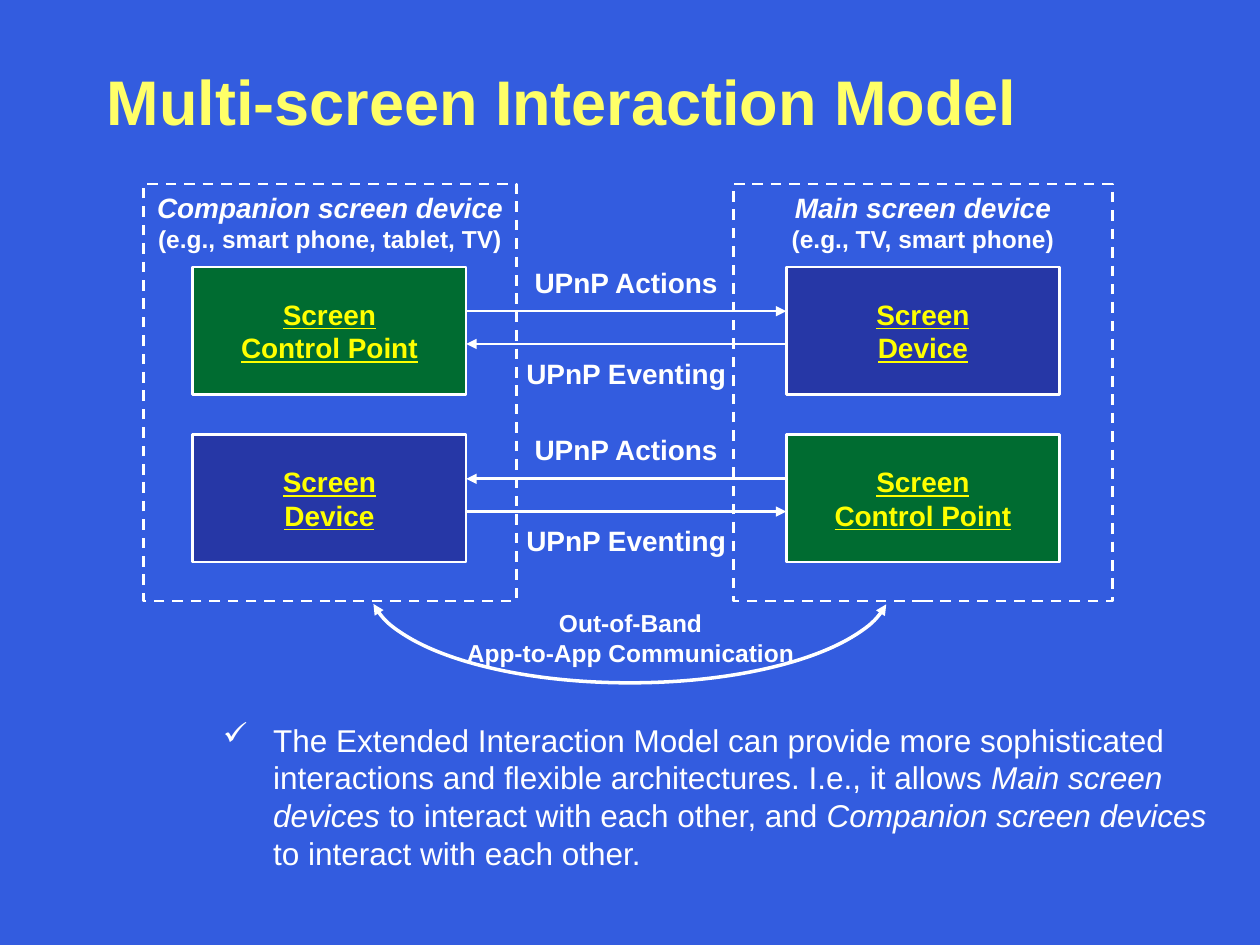
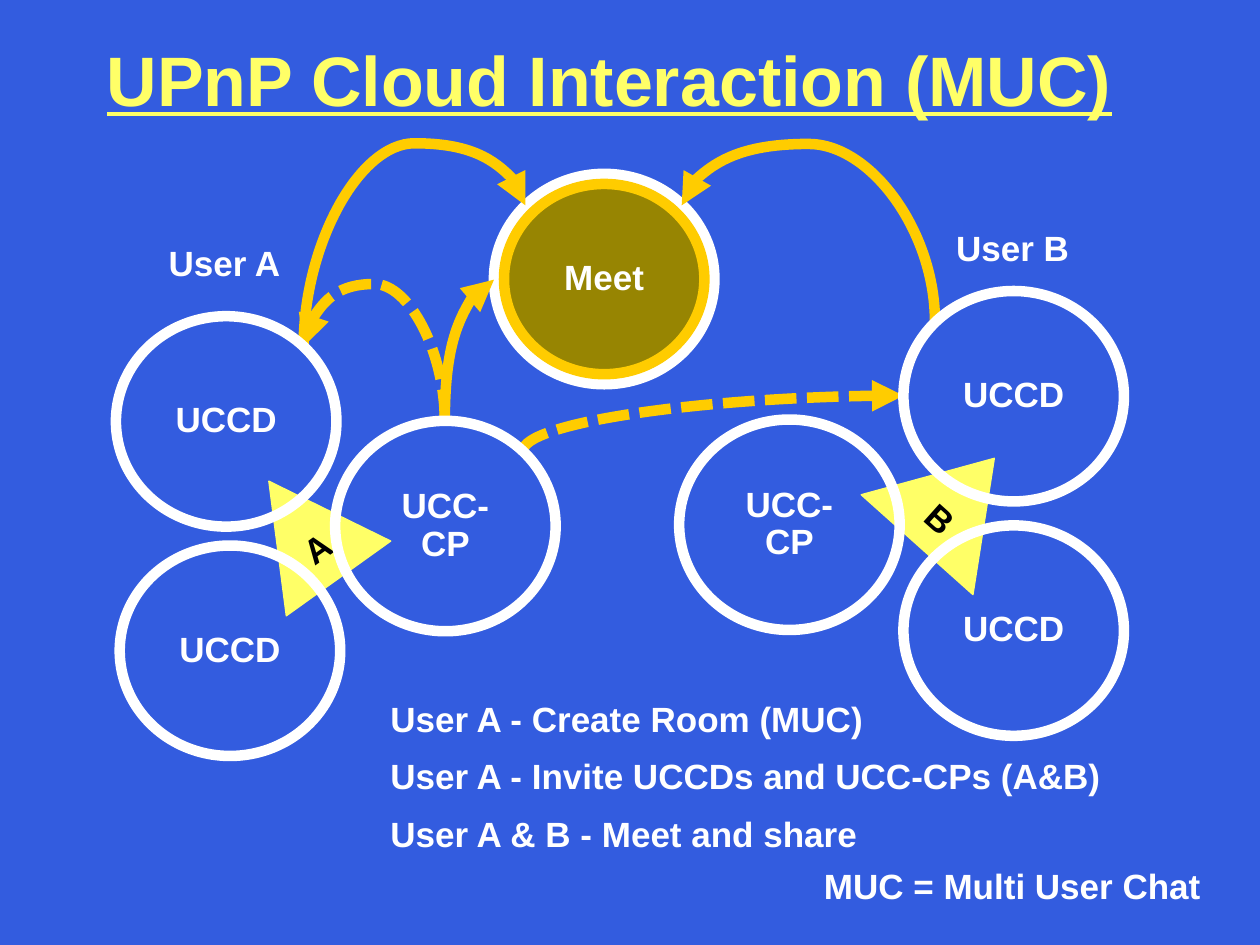
from lxml import etree
from pptx import Presentation
from pptx.dml.color import RGBColor
from pptx.enum import dml, shapes, text
from pptx.oxml.ns import qn
from pptx.util import Inches, Pt

BLUE = RGBColor(0x33, 0x5C, 0xDF)
NAVY = RGBColor(0x26, 0x37, 0xA6)
GREEN = RGBColor(0x00, 0x6C, 0x31)
OLIVE = RGBColor(0x97, 0x85, 0x02)
AMBER = RGBColor(0xFF, 0xCC, 0x00)
LEMON = RGBColor(0xFF, 0xFF, 0x67)
YELLOW = RGBColor(0xFF, 0xFF, 0x00)
WHITE = RGBColor(0xFF, 0xFF, 0xFF)
BLACK = RGBColor(0x00, 0x00, 0x00)

PRESET = shapes.MSO_SHAPE
DASH = dml.MSO_LINE
LEFT, CENTER = text.PP_ALIGN.LEFT, text.PP_ALIGN.CENTER
TOP, MIDDLE = text.MSO_ANCHOR.TOP, text.MSO_ANCHOR.MIDDLE
CIRCLE = (1.75, 1.67)


def write(shape, paragraphs, size=20, color=WHITE, bold=True, underline=False,
          align=CENTER, anchor=MIDDLE, wrap=True, spacing=None, bullet=None):
    """Each paragraph is a string or a list of (text, font overrides) runs."""
    frame = shape.text_frame
    frame.word_wrap, frame.vertical_anchor = wrap, anchor
    for number, content in enumerate(paragraphs):
        paragraph = frame.add_paragraph() if number else frame.paragraphs[0]
        paragraph.alignment = align
        if spacing:
            paragraph.line_spacing = spacing
        if bullet:
            properties = paragraph._p.get_or_add_pPr()
            properties.set("marL", str(Inches(0.4)))
            properties.set("indent", str(-Inches(0.4)))
            etree.SubElement(properties, qn("a:buChar")).set("char", bullet)
        runs = [(content, {})] if isinstance(content, str) else content
        for words, overrides in runs:
            run = paragraph.add_run()
            run.text = words
            font = run.font
            font.name, font.size, font.bold = "Arial", Pt(size), bold
            font.underline = underline
            font.color.rgb = color
            for name, value in overrides.items():
                setattr(font, name, value)


def add_text(slide, box, paragraphs, **style):
    write(slide.shapes.add_textbox(*map(Inches, box)), paragraphs, **style)


def set_line(line, color, width, dash=None):
    line.color.rgb = color
    line.width = Pt(width)
    if dash:
        line.dash_style = dash


def add_figure(slide, preset, box, fill=None, line=WHITE, width=1.5, dash=None):
    figure = slide.shapes.add_shape(preset, *map(Inches, box))
    figure.shadow.inherit = False
    if fill is None:
        figure.fill.background()
    else:
        figure.fill.solid()
        figure.fill.fore_color.rgb = fill
    set_line(figure.line, line, width, dash)
    return figure


def add_arrowheads(figure, *ends):
    outline = figure.line._get_or_add_ln()
    for end in ends:
        etree.SubElement(outline, qn("a:" + end)).set("type", "triangle")


def add_arrow(slide, start, end, kind=shapes.MSO_CONNECTOR.STRAIGHT,
              color=WHITE, width=1.5, dash=None):
    arrow = slide.shapes.add_connector(kind, *map(Inches, start + end))
    set_line(arrow.line, color, width, dash)
    add_arrowheads(arrow, "tailEnd")
    etree.SubElement(arrow._element.spPr, qn("a:effectLst"))
    return arrow


def add_curve(slide, start, end, bend=None, dash=None):
    """Curve that leaves upwards; bend is how far it rises, as a share of the height."""
    middle_x, middle_y = (start[0] + end[0]) / 2, (start[1] + end[1]) / 2
    rightwards = end[0] > start[0]
    side = 1 if rightwards else -1
    across = side * (start[1] - middle_y)
    down = side * (middle_x - start[0])
    curve = add_arrow(slide, (middle_x + across, middle_y + down),
                      (middle_x - across, middle_y - down),
                      shapes.MSO_CONNECTOR.CURVE, AMBER, 6, dash)
    properties = curve._element.spPr
    properties.find(qn("a:xfrm")).set("rot", str((90 if rightwards else 270) * 60000))
    geometry = properties.find(qn("a:prstGeom"))
    if bend is None:
        geometry.set("prst", "curvedConnector2")
    else:
        guides = geometry.find(qn("a:avLst"))
        if guides is None:
            guides = etree.SubElement(geometry, qn("a:avLst"))
        guide = etree.SubElement(guides, qn("a:gd"))
        guide.set("name", "adj1")
        guide.set("fmla", f"val {round(bend * 100000)}")


def start_slide(deck, title, top, size, underline=False):
    slide = deck.slides.add_slide(deck.slide_layouts[6])
    slide.background.fill.solid()
    slide.background.fill.fore_color.rgb = BLUE
    add_text(slide, (0.75, top, 8.5, 0.83), [title], size=size, color=LEMON,
             underline=underline, align=LEFT, spacing=0.9)
    return slide


def add_screen_device(slide, box, name, examples):
    frame = add_figure(slide, PRESET.RECTANGLE, box, dash=DASH.DASH)
    write(frame, [[(name, {"italic": True, "size": Pt(16)})], examples],
          size=14, anchor=TOP)


def add_exchange(slide, top, control_left, device_left):
    """Control point and device, with actions sent one way and events the other."""
    width, height = 2.17, 1.01
    for left, role, fill in ((control_left, "Control Point", GREEN),
                             (device_left, "Device", NAVY)):
        block = add_figure(slide, PRESET.RECTANGLE, (left, top, width, height), fill)
        write(block, ["Screen", role], size=16, color=YELLOW, underline=True)
    inner_left = min(control_left, device_left) + width
    inner_right = max(control_left, device_left)
    ends = [inner_left, inner_right]
    if control_left > device_left:
        ends.reverse()
    source, target = ends
    add_arrow(slide, (source, top + 0.35), (target, top + 0.35))
    add_arrow(slide, (target, top + 0.61), (source, top + 0.61))
    for offset, label in ((-0.05, "UPnP Actions"), (0.67, "UPnP Eventing")):
        add_text(slide, (inner_left, top + offset, inner_right - inner_left, 0.34),
                 [label], size=16)


def add_out_of_band(slide, left, top):
    arc = add_figure(slide, PRESET.ARC, (left, top, 4.14, 1.53), width=2)
    arc.adjustments[0], arc.adjustments[1] = 2.396, 105.66
    add_arrowheads(arc, "headEnd", "tailEnd")
    add_text(slide, (left + 0.59, top + 0.89, 2.97, 0.53),
             ["Out-of-Band", "App-to-App Communication"], size=14, anchor=TOP)


def build_interaction_model(deck):
    slide = start_slide(deck, "Multi-screen Interaction Model", 0.42, 36)
    italic = {"italic": True}
    add_text(slide, (1.67, 5.67, 8.08, 1), [[
        ("The Extended Interaction Model can provide more sophisticated interactions "
         "and flexible architectures. I.e., it allows ", {}),
        ("Main screen devices ", italic),
        ("to interact with each other, and ", {}),
        ("Companion screen devices ", italic),
        ("to interact with each other.", {}),
    ]], size=18, bold=False, align=LEFT, anchor=TOP, bullet="✓")
    add_screen_device(slide, (1.14, 1.46, 2.96, 3.31), "Companion screen device",
                      "(e.g., smart phone, tablet, TV)")
    add_screen_device(slide, (5.82, 1.46, 3.01, 3.31), "Main screen device",
                      "(e.g., TV, smart phone)")
    companion_left, main_left = 1.53, 6.24
    add_exchange(slide, 2.12, companion_left, main_left)
    add_exchange(slide, 3.45, main_left, companion_left)
    add_out_of_band(slide, 2.93, 3.89)


def add_user(slide, user, name_at, triangle, rotation, members):
    """Named user: a turned triangle joining the circles of the user's members."""
    link = add_figure(slide, PRESET.ISOSCELES_TRIANGLE, triangle, LEMON, LEMON, 0.75)
    link.rotation = rotation
    write(link, [user], color=BLACK, anchor=TOP, spacing=0.9)
    for label, left, top in members:
        circle = add_figure(slide, PRESET.OVAL, (left, top) + CIRCLE, width=6)
        write(circle, [label], spacing=0.9)
    add_text(slide, name_at + (1.1, 0.44), [f"User {user}"],
             align=LEFT, anchor=TOP, wrap=False)


def build_cloud_interaction(deck):
    slide = start_slide(deck, "UPnP Cloud Interaction (MUC)", 0.25, 40, underline=True)
    add_figure(slide, PRESET.OVAL, (3.92, 1.38) + CIRCLE, width=6)
    add_curve(slide, (3.53, 3.34), (3.92, 2.22))
    add_curve(slide, (3.53, 3.34), (2.41, 2.75), 1.84, DASH.SQUARE_DOT)
    add_curve(slide, (4.15, 3.58), (7.17, 3.14), dash=DASH.SQUARE_DOT)
    add_curve(slide, (2.41, 2.75), (4.17, 1.63), 1.44)
    add_curve(slide, (7.42, 2.55), (5.41, 1.63), 1.53)
    meeting = add_figure(slide, PRESET.OVAL, (4, 1.46, 1.59, 1.51), OLIVE, AMBER, 6)
    write(meeting, ["Meet"], spacing=0.9)

    add_user(slide, "A", (1.24, 1.87), (1.9, 3.73, 1.02, 0.95), 324.4,
             [("UCC-CP", 2.66, 3.34), ("UCCD", 0.95, 4.33), ("UCCD", 0.92, 2.51)])
    add_user(slide, "B", (7.49, 1.75), (6.99, 3.52, 1.19, 0.92), 41.8,
             [("UCCD", 7.17, 2.31), ("UCCD", 7.17, 4.17), ("UCC-CP", 5.39, 3.33)])

    for left, top, width, note in (
            (3, 5.49, 3.98, "User A - Create Room (MUC)"),
            (3, 5.94, 5.89, "User A - Invite UCCDs and UCC-CPs (A&B)"),
            (3, 6.4, 3.93, "User A & B - Meet and share"),
            (6.44, 6.81, 3.21, "MUC = Multi User Chat")):
        add_text(slide, (left, top, width, 0.44), [note],
                 align=LEFT, anchor=TOP, wrap=False)


def main():
    deck = Presentation()
    deck.slide_width, deck.slide_height = Inches(10), Inches(7.5)
    build_interaction_model(deck)
    build_cloud_interaction(deck)
    deck.save("out.pptx")


if __name__ == "__main__":
    main()
